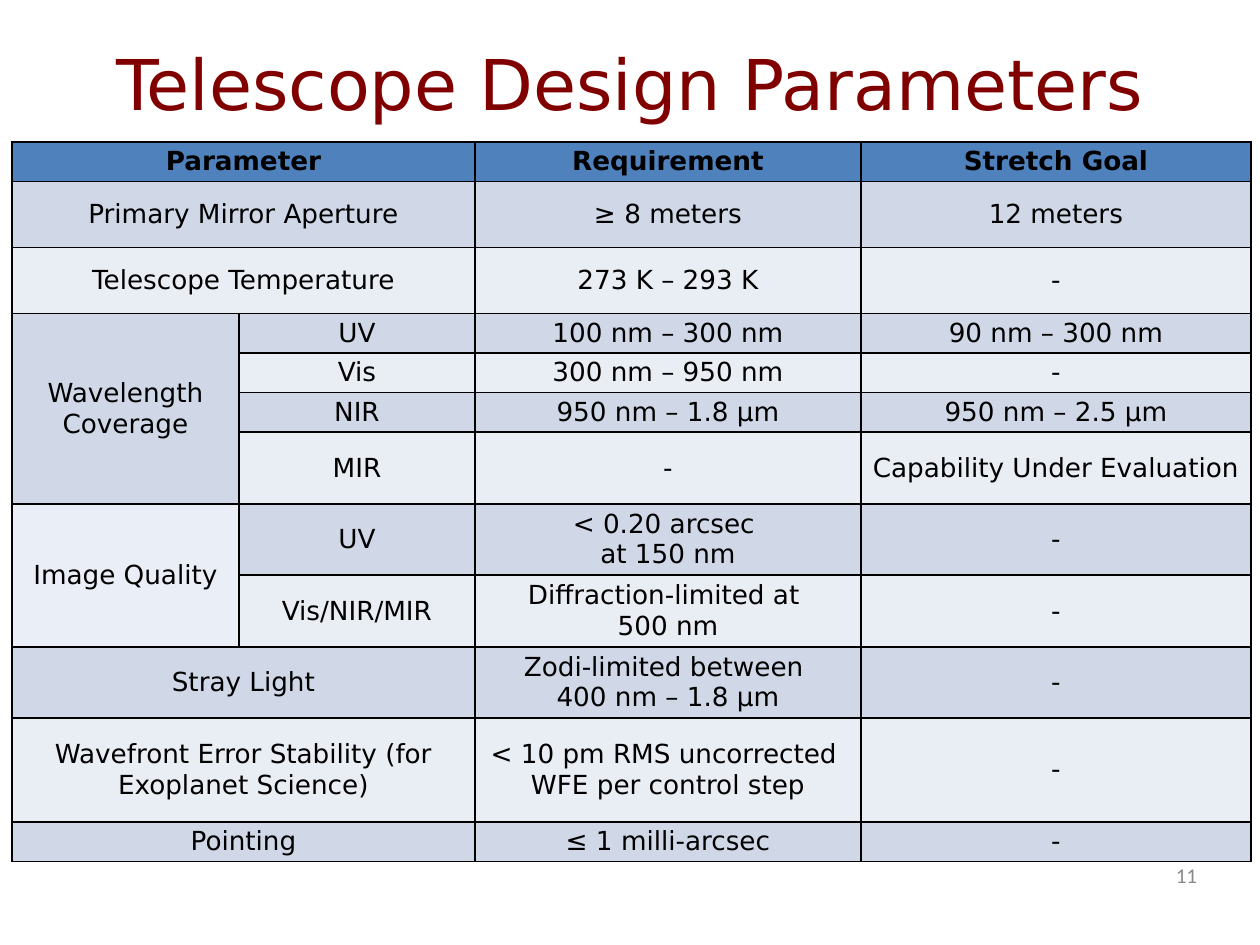
from copy import deepcopy

from pptx import Presentation
from pptx.dml.color import RGBColor
from pptx.enum.text import MSO_ANCHOR as ANCHOR, PP_ALIGN as ALIGN
from pptx.oxml import parse_xml
from pptx.oxml.ns import nsdecls, qn
from pptx.util import Emu, Pt

BLACK = RGBColor(0x00, 0x00, 0x00)
MAROON = RGBColor(0x80, 0x00, 0x00)
GRAY = RGBColor(0x89, 0x89, 0x89)
HEADER = RGBColor(0x4F, 0x81, 0xBD)
BAND_DARK = RGBColor(0xD0, 0xD8, 0xE8)
BAND_LIGHT = RGBColor(0xE9, 0xED, 0xF4)
QUALITY = RGBColor(0xEA, 0xEF, 0xF7)

PX = 914400 / 126
INSET = 4
COLS = [227, 236, 386, 390]
ROWS = [39, 66, 66, 39, 39, 39, 72, 71, 72, 71, 104, 39]
CELLS = [
    ["Parameter", None, "Requirement", "Stretch Goal"],
    ["Primary Mirror Aperture", None, "≥ 8 meters", "12 meters"],
    ["Telescope Temperature", None, "273 K – 293 K", "-"],
    ["Wavelength Coverage", "UV", "100 nm – 300 nm", "90 nm – 300 nm"],
    [None, "Vis", "300 nm – 950 nm", "-"],
    [None, "NIR", "950 nm – 1.8 µm", "950 nm – 2.5 µm"],
    [None, "MIR", "-", "Capability Under Evaluation"],
    ["Image Quality", "UV", "< 0.20 arcsec \nat 150 nm", "-"],
    [None, "Vis/NIR/MIR", "Diffraction-limited at \n500 nm", "-"],
    ["Stray Light", None, "Zodi-limited between \n400 nm – 1.8 µm", "-"],
    ["Wavefront Error Stability (for Exoplanet Science)", None,
     "< 10 pm RMS uncorrected \nWFE per control step", "-"],
    ["Pointing", None, "≤ 1 milli-arcsec", "-"],
]
GROUPS = {3: 6, 7: 8}


def px(n):
    """Turn pixels into EMU."""
    return Emu(round(n * PX))


class Deck:
    """Hold the text style and the current slide."""

    def __init__(self, prs, font):
        self.font = font
        self.s = prs.slides.add_slide(prs.slide_layouts[6])

    def fill_text(self, p, text, align, **fmt):
        """Fill a paragraph and format its runs and line breaks."""
        p.text = text
        p.alignment = align
        color = fmt.pop("color")
        for r in p.runs:
            for name, value in {"name": self.font, **fmt}.items():
                setattr(r.font, name, value)
            r.font.color.rgb = color
        for br in p._p.findall(qn("a:br")):
            br.append(deepcopy(p.runs[0]._r.rPr))

    def text(self, box, text, align, **fmt):
        """Add a middle-anchored text box without insets."""
        tf = self.s.shapes.add_textbox(*map(px, box)).text_frame
        frame = {"word_wrap": True, "vertical_anchor": ANCHOR.MIDDLE,
                 "margin_left": 0, "margin_right": 0,
                 "margin_top": 0, "margin_bottom": 0}
        for name, value in frame.items():
            setattr(tf, name, value)
        self.fill_text(tf.paragraphs[0], text, align, **fmt)

    def table(self, left, top, cols, rows):
        """Add an empty table with the given column widths and row heights."""
        box = map(px, (left, top, sum(cols), sum(rows)))
        tbl = self.s.shapes.add_table(len(rows), len(cols), *box).table
        for col, width in zip(tbl.columns, cols):
            col.width = px(width)
        for row, height in zip(tbl.rows, rows):
            row.height = px(height)
        return tbl

    def cell(self, cell, text, fill, anchor, **fmt):
        """Style a table cell and set its text."""
        tc_pr = cell._tc.get_or_add_tcPr()
        for side in ("lnL", "lnR", "lnT", "lnB"):
            tc_pr.append(parse_xml(
                f'<a:{side} {nsdecls("a")} w="12700"><a:solidFill>'
                f'<a:srgbClr val="{BLACK}"/></a:solidFill></a:{side}>'))
        for side in ("left", "right", "top", "bottom"):
            setattr(cell, f"margin_{side}", px(INSET))
        cell.vertical_anchor = anchor
        cell.fill.solid()
        cell.fill.fore_color.rgb = fill
        if text:
            self.fill_text(cell.text_frame.paragraphs[0], text, ALIGN.CENTER, **fmt)


def main():
    """Build the telescope parameter slide."""
    prs = Presentation()
    prs.slide_width, prs.slide_height = px(1260), px(945)
    deck = Deck(prs, "DejaVu Sans")
    deck.text((903, 857, 294, 37), "11", ALIGN.RIGHT,
              name="Calibri", size=Pt(12), color=GRAY)

    tbl = deck.table(12, 142, COLS, ROWS)
    for i, row in enumerate(CELLS):
        head = i == 0
        band = HEADER if head else BAND_DARK if i % 2 else BAND_LIGHT
        for j, text in enumerate(row):
            fill = QUALITY if text == "Image Quality" else band
            deck.cell(tbl.cell(i, j), text, fill,
                      ANCHOR.TOP if head else ANCHOR.MIDDLE,
                      size=Pt(15), bold=head, color=BLACK)
        if row[1] is None:
            tbl.cell(i, 0).merge(tbl.cell(i, 1))
    for first, last in GROUPS.items():
        tbl.cell(first, 0).merge(tbl.cell(last, 0))

    deck.text((63, 4, 1134, 157), "Telescope Design Parameters", ALIGN.CENTER,
              size=Pt(40), color=MAROON)
    prs.save("out.pptx")


if __name__ == "__main__":
    main()
